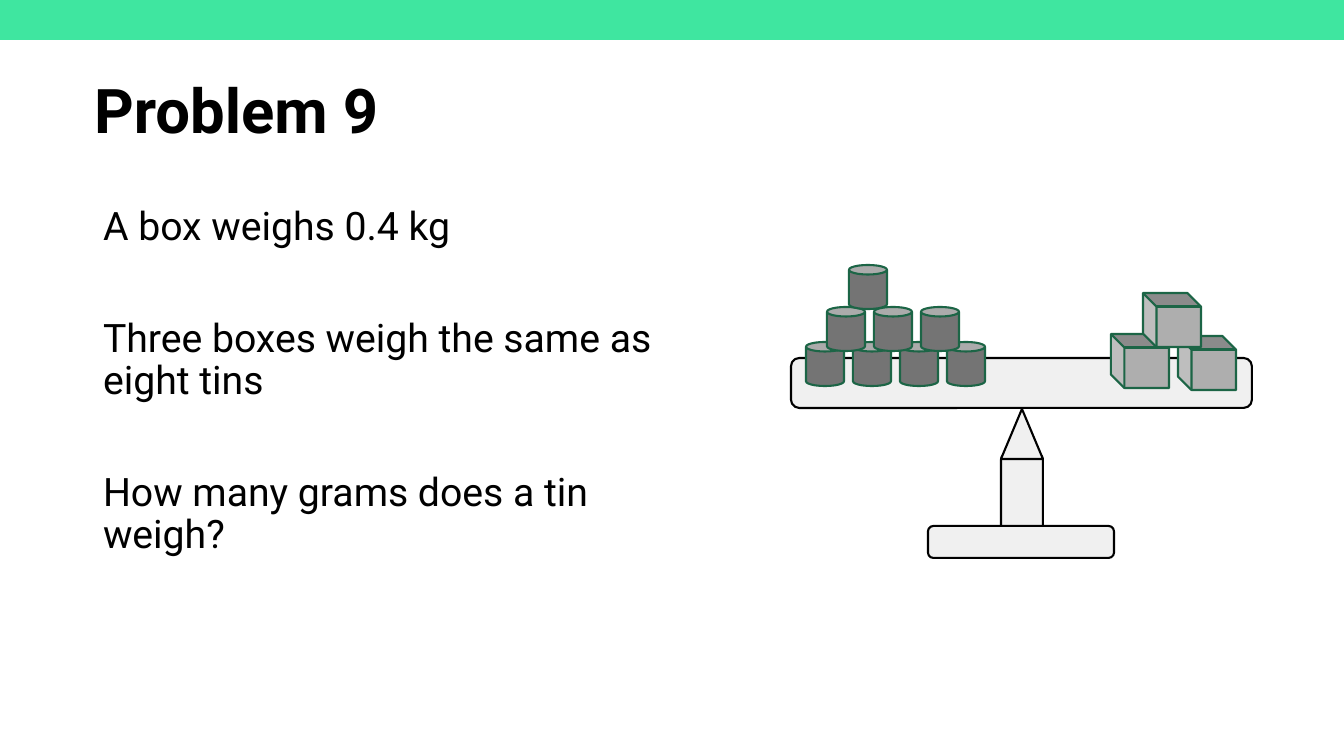
from dataclasses import dataclass

from lxml.etree import SubElement
from pptx import Presentation
from pptx.dml.color import RGBColor
from pptx.enum.shapes import MSO_SHAPE
from pptx.enum.text import MSO_ANCHOR, MSO_AUTO_SIZE, PP_ALIGN
from pptx.oxml.ns import qn
from pptx.util import Emu, Pt

PX = 914400 / 100.8
FONT = "Roboto"
COLORS = {
    "bar": "3FE6A0",
    "text": "000000",
    "scale": "F0F0F0",
    "tin": "747474",
    "box": "AEAEAE",
    "edge": "1C6546",
}


@dataclass(frozen=True)
class Style:
    fill: str
    line: str | None = None


@dataclass(frozen=True)
class Part:
    kind: MSO_SHAPE
    left: int
    top: int
    width: int
    height: int
    style: Style
    turn: int = 0


def px(value: int) -> Emu:
    return Emu(round(value * PX))


def color(name: str) -> RGBColor:
    return RGBColor.from_string(COLORS[name])


def draw(shapes, part: Part) -> None:
    shape = shapes.add_shape(part.kind, px(part.left), px(part.top),
                             px(part.width), px(part.height))
    shape.rotation = part.turn
    shape.shadow.inherit = False
    shape.fill.solid()
    shape.fill.fore_color.rgb = color(part.style.fill)
    if part.style.line:
        shape.line.color.rgb = color(part.style.line)
        shape.line.width = Pt(1.5)
    else:
        shape.line.fill.background()


def write(holder, lines: list[str], size: int, bold: bool, gap: float,
          anchor: MSO_ANCHOR) -> None:
    frame = holder.text_frame
    frame.text = "\n".join(lines)
    frame.auto_size = MSO_AUTO_SIZE.NONE
    frame.vertical_anchor = anchor
    for index, para in enumerate(frame.paragraphs):
        props = para._p.get_or_add_pPr()
        props.set("marL", "0")
        props.set("indent", "0")
        SubElement(props, qn("a:buNone"))
        para.alignment = PP_ALIGN.LEFT
        para.line_spacing = 0.9
        para.space_before = Pt(gap if index else 0)
        for run in para.runs:
            run.font.name = FONT
            run.font.size = Pt(size)
            run.font.bold = bold
            run.font.color.rgb = color("text")


def place(holder, left: int, top: int, width: int, height: int) -> None:
    holder.left, holder.top = px(left), px(top)
    holder.width, holder.height = px(width), px(height)


SCALE = Style("scale", "text")
TIN = Style("tin", "edge")
BOX = Style("box", "edge")

# Balance: post, beam, foot and tip
BALANCE = [
    Part(MSO_SHAPE.ROUNDED_RECTANGLE, 1001, 453, 42, 100, SCALE),
    Part(MSO_SHAPE.ROUNDED_RECTANGLE, 791, 358, 461, 50, SCALE),
    Part(MSO_SHAPE.ROUNDED_RECTANGLE, 928, 526, 186, 32, SCALE),
    Part(MSO_SHAPE.ISOSCELES_TRIANGLE, 1001, 409, 42, 50, SCALE),
]

# Rows of tins from the beam up: left, top, count
TIN_ROWS = [(806, 342, 4), (827, 307, 3), (849, 265, 1)]
TIN_STEP = 47
TINS = [
    Part(MSO_SHAPE.CAN, left + TIN_STEP * index, top, 38, 44, TIN)
    for left, top, count in TIN_ROWS
    for index in range(count)
]

# Boxes: right, left, then the one on top
BOXES = [
    Part(MSO_SHAPE.CUBE, left, top, 54, 58, BOX, 270)
    for left, top in [(1180, 334), (1113, 332), (1145, 291)]
]


def main() -> None:
    deck = Presentation()
    deck.slide_width, deck.slide_height = px(1344), px(756)
    slide = deck.slides.add_slide(deck.slide_layouts[1])

    # Top bar
    draw(slide.shapes, Part(MSO_SHAPE.RECTANGLE, 0, 0, 1344, 40, Style("bar")))

    # Title and problem text
    title, body = slide.placeholders
    place(title, 84, 41, 1159, 146)
    write(title, ["Problem 9"], 44, True, 0, MSO_ANCHOR.MIDDLE)
    place(body, 93, 202, 624, 423)
    write(body, [
        "A box weighs 0.4 kg",
        "Three boxes weigh the same as eight tins",
        "How many grams does a tin weigh?",
    ], 28, False, 49.5, MSO_ANCHOR.TOP)

    # Balance with its load
    group = slide.shapes.add_group_shape()
    for part in BALANCE:
        draw(group.shapes, part)
    for part in BOXES + TINS:
        draw(slide.shapes, part)

    deck.save("out.pptx")


if __name__ == "__main__":
    main()
